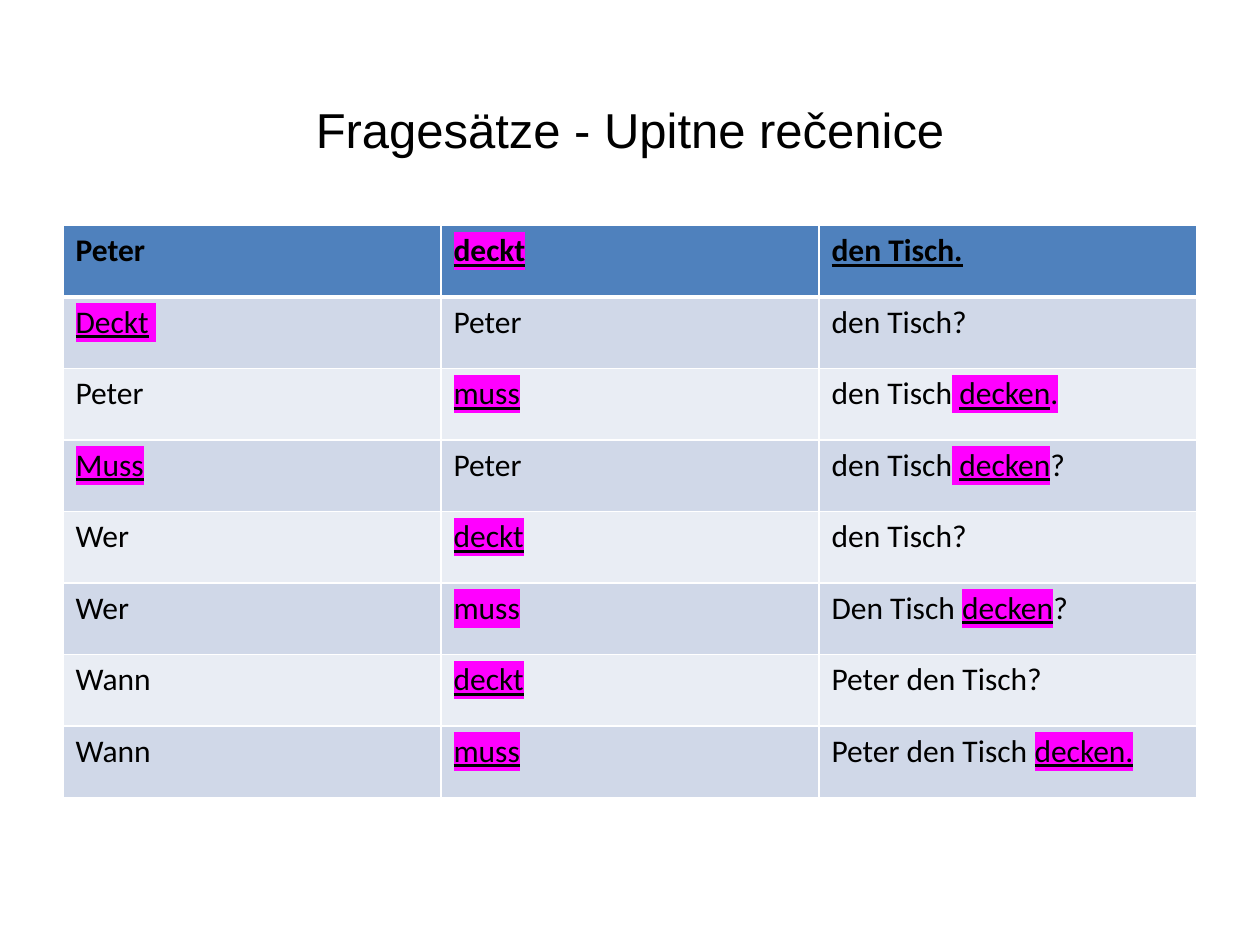
from dataclasses import dataclass

from lxml.etree import SubElement
from pptx import Presentation
from pptx.dml.color import RGBColor
from pptx.enum.text import MSO_ANCHOR, PP_ALIGN
from pptx.oxml.ns import qn
from pptx.util import Inches, Pt


@dataclass(frozen=True)
class Theme:
    text: str = "000000"
    marker: str = "FF00FF"
    header: str = "4F81BD"
    bands: tuple = ("D0D8E8", "E9EDF4")
    border: str = "FFFFFF"
    title_font: str = "Arial"
    table_font: str = "Calibri"
    title_size: int = 28
    table_size: int = 18
    border_width: int = 1
    header_rule: int = 3


@dataclass(frozen=True)
class Span:
    text: str
    underline: bool = False
    marked: bool = False


THEME = Theme()


def plain(text):
    return Span(text)


def verb(text):
    return Span(text, underline=True, marked=True)


def marked(text):
    return Span(text, marked=True)


SENTENCES = [
    [[plain("Peter")], [verb("deckt")], [Span("den Tisch.", underline=True)]],
    [[verb("Deckt"), marked(" ")], [plain("Peter")], [plain("den Tisch?")]],
    [[plain("Peter")], [verb("muss")],
     [plain("den Tisch"), marked(" "), verb("decken"), marked(".")]],
    [[verb("Muss")], [plain("Peter")],
     [plain("den Tisch"), marked(" "), verb("decken"), plain("?")]],
    [[plain("Wer")], [verb("deckt")], [plain("den Tisch?")]],
    [[plain("Wer")], [marked("muss")],
     [plain("Den Tisch "), verb("decken"), plain("?")]],
    [[plain("Wann")], [verb("deckt")], [plain("Peter den Tisch?")]],
    [[plain("Wann")], [verb("muss")],
     [plain("Peter den Tisch "), verb("decken.")]],
]


def set_font(font, name, size, bold=False):
    font.name = name
    font.size = Pt(size)
    font.bold = bold
    font.color.rgb = RGBColor.from_string(THEME.text)


def add_color(parent, tag, color):
    holder = SubElement(parent, qn(tag))
    SubElement(holder, qn("a:srgbClr")).set("val", color)


def set_borders(cell, bottom_width):
    """Draw the four cell borders; they must precede the cell fill."""
    properties = cell._tc.get_or_add_tcPr()
    for side in "LRTB":
        width = bottom_width if side == "B" else THEME.border_width
        line = SubElement(properties, qn(f"a:ln{side}"))
        line.set("w", str(Pt(width)))
        add_color(line, "a:solidFill", THEME.border)


def fill_cell(cell, spans, color, is_header):
    set_borders(cell, THEME.header_rule if is_header else THEME.border_width)
    cell.fill.solid()
    cell.fill.fore_color.rgb = RGBColor.from_string(color)
    para = cell.text_frame.paragraphs[0]
    set_font(para.font, THEME.table_font, THEME.table_size, is_header)
    for span in spans:
        run = para.add_run()
        run.text = span.text
        if span.underline:
            run.font.underline = True
        if span.marked:
            add_color(run._r.get_or_add_rPr(), "a:highlight", THEME.marker)


def add_title(page, left, top, width, height):
    box = page.shapes.add_textbox(left, top, width, height)
    frame = box.text_frame
    frame.word_wrap = True
    frame.vertical_anchor = MSO_ANCHOR.MIDDLE
    para = frame.paragraphs[0]
    para.text = "Fragesätze - Upitne rečenice"
    para.alignment = PP_ALIGN.CENTER
    set_font(para.font, THEME.title_font, THEME.title_size)


def add_sentence_table(page, left, top, width, height):
    frame = page.shapes.add_table(
        len(SENTENCES), len(SENTENCES[0]), left, top, width, height)
    table = frame.table
    table.first_row = False
    table.horz_banding = False
    for row, sentence in enumerate(SENTENCES):
        is_header = row == 0
        color = THEME.header if is_header else THEME.bands[(row - 1) % 2]
        for column, spans in enumerate(sentence):
            fill_cell(table.cell(row, column), spans, color, is_header)


def main():
    deck = Presentation()
    deck.slide_width, deck.slide_height = Inches(10), Inches(7.5)
    page = deck.slides.add_slide(deck.slide_layouts[6])
    left, width = Inches(0.5), Inches(9)
    add_title(page, left, Inches(0.3), width, Inches(1.45))
    add_sentence_table(page, left, Inches(1.79), width, Inches(4.54))
    deck.save("out.pptx")


if __name__ == "__main__":
    main()
